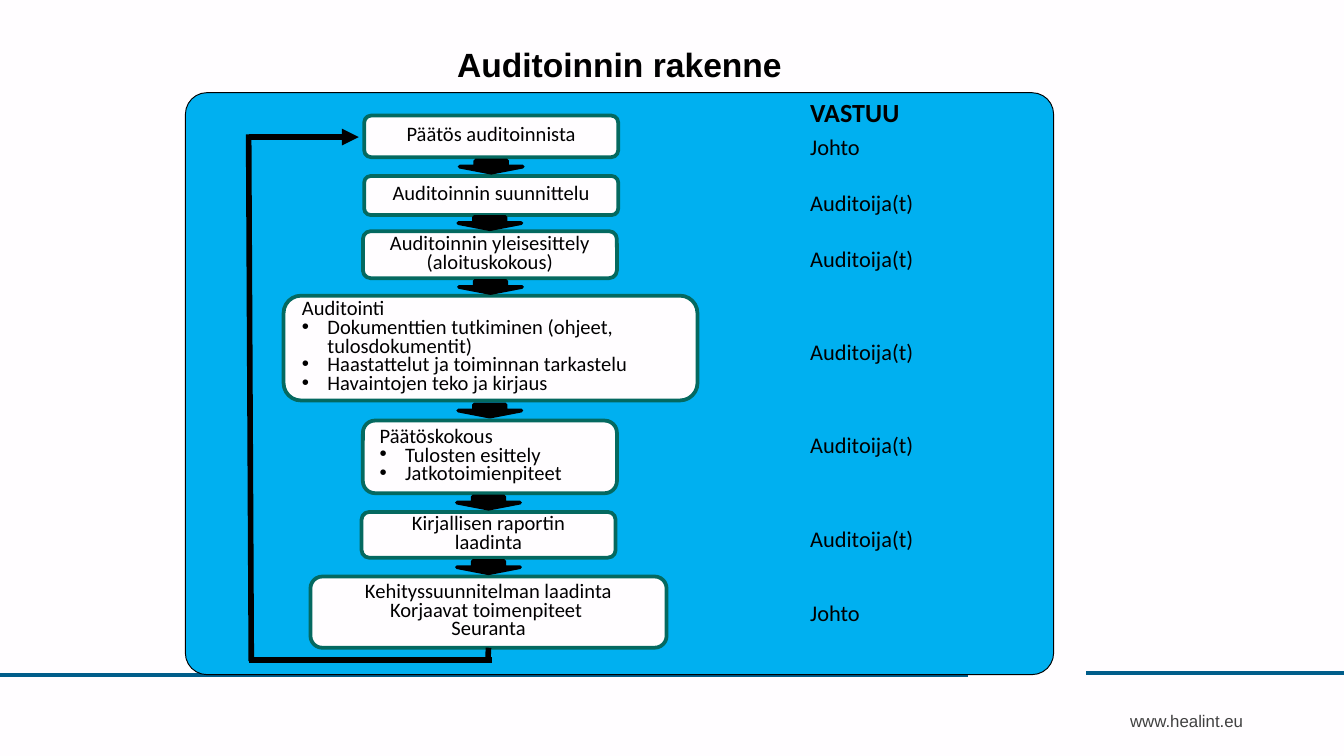
from itertools import pairwise

from lxml import etree
from pptx import Presentation
from pptx.dml.color import RGBColor
from pptx.enum.shapes import MSO_CONNECTOR as Line, MSO_SHAPE as Shape
from pptx.enum.text import MSO_ANCHOR as Anchor, PP_ALIGN as Align
from pptx.oxml.ns import qn
from pptx.util import Inches, Pt

prs = Presentation()
prs.slide_width = Inches(10)
prs.slide_height = prs.slide_width * 9 // 16
unit = prs.slide_width / 100  # grid of 100 columns, square cells


def paint(target, color, line_color=None, weight=None):
    """Colour a fill or font; with a line colour, a whole shape or connector."""
    if line_color is None:
        if hasattr(target, "solid"):
            target.solid()
            target.fore_color.rgb = RGBColor.from_string(color)
        else:
            target.color.rgb = RGBColor.from_string(color)
        return
    if color:
        paint(target.fill, color)
        target.shadow.inherit = False
    else:
        etree.SubElement(target._element.spPr, qn("a:effectLst"))
    target.line.color.rgb = RGBColor.from_string(line_color)
    target.line.width = Pt(weight)


def write(frame, lines, size, font="Calibri", color="000000", bold=False,
          align=Align.LEFT, spacing=None, gaps=(), bullets=False):
    """Write one paragraph per line; bullets start on the second line."""
    frame.word_wrap = True
    for i, words in enumerate(lines):
        para = frame.paragraphs[0] if i == 0 else frame.add_paragraph()
        para.text = words
        if bullets and i:
            props = para._p.get_or_add_pPr()
            props.set("marL", str(Inches(0.19)))
            props.set("indent", str(-Inches(0.19)))
            etree.SubElement(props, qn("a:buFont")).set("typeface", "Arial")
            etree.SubElement(props, qn("a:buChar")).set("char", "•")
        para.alignment = align
        if spacing:
            para.line_spacing = Pt(spacing)
        if i and gaps:
            para.space_before = Pt(gaps[i - 1] * spacing)
        para.font.size, para.font.name, para.font.bold = Pt(size), font, bold
        paint(para.font, color)


slide = prs.slides.add_slide(prs.slide_layouts[5])
shapes = slide.shapes
paint(slide.background.fill, "FFFDFF")

# Footer rules and web address
for start, end, row in [(72, 0, 50.2), (100, 80.8, 50.1)]:
    rule = shapes.add_connector(Line.STRAIGHT, *(int(n * unit) for n in (start, row, end, row)))
    paint(rule, None, "005D8A", 2.25)
address = shapes.add_textbox(*(int(n * unit) for n in (83.1, 52.4, 16.9, 4)))
write(address.text_frame, ["www.healint.eu"], 9, "Arial", "404040")

# Title
title = shapes.title
title.left, title.top, title.width, title.height = (int(n * unit) for n in (7.5, 2, 77.2, 5.5))
title.text_frame.vertical_anchor = Anchor.MIDDLE
write(title.text_frame, ["Auditoinnin rakenne"], 18, "Arial", bold=True, align=Align.CENTER)

# Blue panel
panel = shapes.add_shape(Shape.ROUNDED_RECTANGLE, *(int(n * unit) for n in (13.8, 6.9, 64.6, 43.3)))
panel.adjustments[0] = 0.037
paint(panel, "00B0F0", "000000", 0.5)

# Audit steps: left, top, width, height, bulleted, lines
steps = [
    (27.1, 8.6, 18.9, 3.1, False, ["Päätös auditoinnista"]),
    (27.1, 13.1, 18.9, 2.9, False, ["Auditoinnin suunnittelu"]),
    (27, 17.2, 18.9, 3.5, False, ["Auditoinnin yleisesittely", "(aloituskokous)"]),
    (21.1, 22, 30.8, 7.8, True, [
        "Auditointi", "Dokumenttien tutkiminen (ohjeet, tulosdokumentit)",
        "Haastattelut ja toiminnan tarkastelu", "Havaintojen teko ja kirjaus"]),
    (27, 31.3, 18.9, 5.4, True, ["Päätöskokous", "Tulosten esittely", "Jatkotoimienpiteet"]),
    (26.9, 38.1, 18.9, 3.4, False, ["Kirjallisen raportin laadinta"]),
    (23.1, 42.9, 26.5, 5.3, False, [
        "Kehityssuunnitelman laadinta", "Korjaavat toimenpiteet ", "Seuranta"]),
]
boxes = []
for *place, bulleted, lines in steps:
    box = shapes.add_shape(Shape.ROUNDED_RECTANGLE, *(int(n * unit) for n in place))
    paint(box, "FFFDFF", "046960", 2)
    box.text_frame.vertical_anchor = Anchor.MIDDLE
    write(box.text_frame, lines, 11, spacing=10, bullets=bulleted,
          align=Align.LEFT if bulleted else Align.CENTER)
    boxes.append(box)

# Block arrows, centred in the gap above each following step
arrow_width, arrow_height = int(4.7 * unit), int(0.9 * unit)
for upper, lower in pairwise(boxes):
    gap_middle = (upper.top + upper.height + lower.top) // 2
    arrow = shapes.add_shape(
        Shape.DOWN_ARROW, lower.left + (lower.width - arrow_width) // 2,
        gap_middle - arrow_height // 2, arrow_width, arrow_height)
    paint(arrow, "000000", "000000", 2)

# Return path from the last step, ending just short of the first
path_lines = []
for ends in [(36.3, 48.2, 36.3, 49.2), (36.6, 49.1, 18.5, 49.1),
             (18.5, 10, 18.7, 49.2), (18.5, 10.2, 26.7, 10.2)]:
    segment = shapes.add_connector(Line.STRAIGHT, *(int(n * unit) for n in ends))
    paint(segment, None, "000000", 3)
    path_lines.append(segment)
path_lines[0].begin_connect(boxes[-1], 2)
arrow_line = path_lines[-1]._element.spPr.find(qn("a:ln"))
etree.SubElement(arrow_line, qn("a:tailEnd")).set("type", "triangle")

# Responsibilities, with gaps counted in lines
heading = shapes.add_textbox(*(int(n * unit) for n in (59.3, 6.7, 8.7, 3.4)))
write(heading.text_frame, ["VASTUU"], 14, bold=True)
owners = shapes.add_textbox(*(int(n * unit) for n in (59.3, 10, 14.2, 38.9)))
write(owners.text_frame, ["Johto", *["Auditoija(t)"] * 5, "Johto"], 12,
      spacing=10, gaps=(2, 2, 4, 4, 4, 3))

prs.save("out.pptx")
